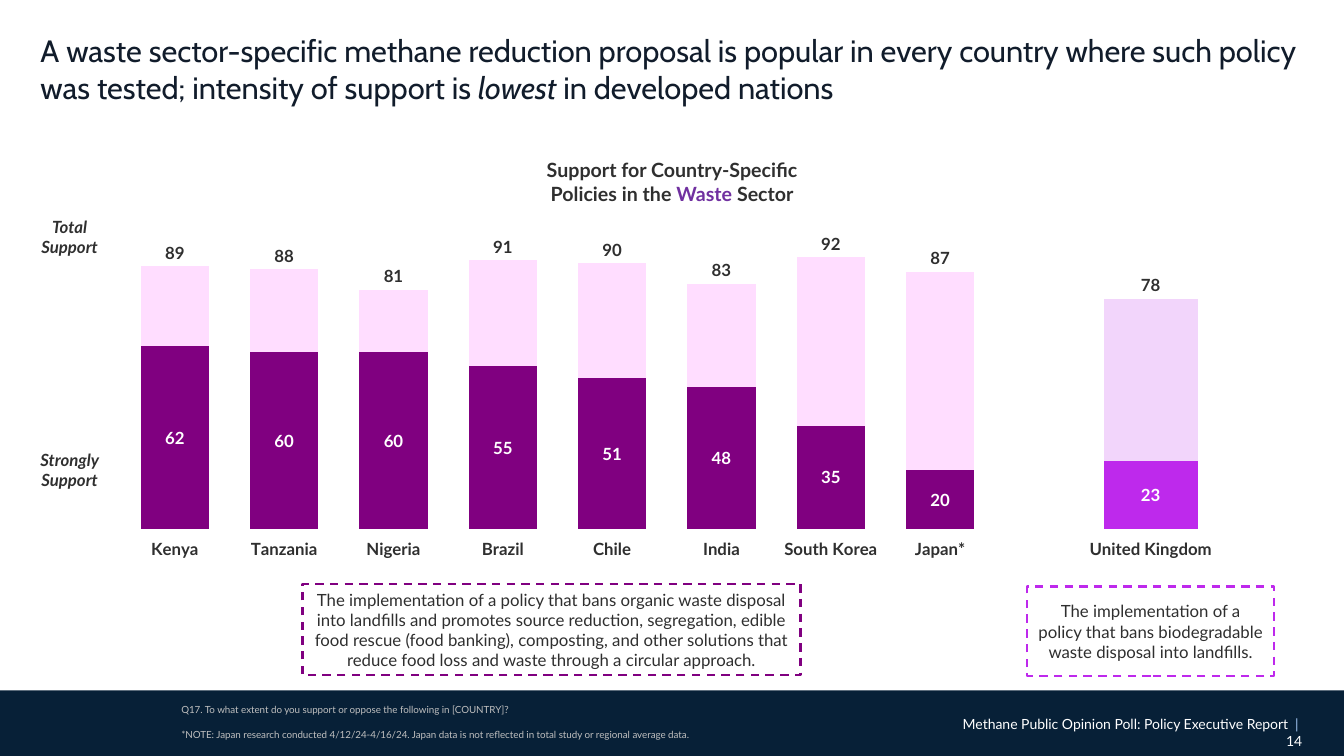
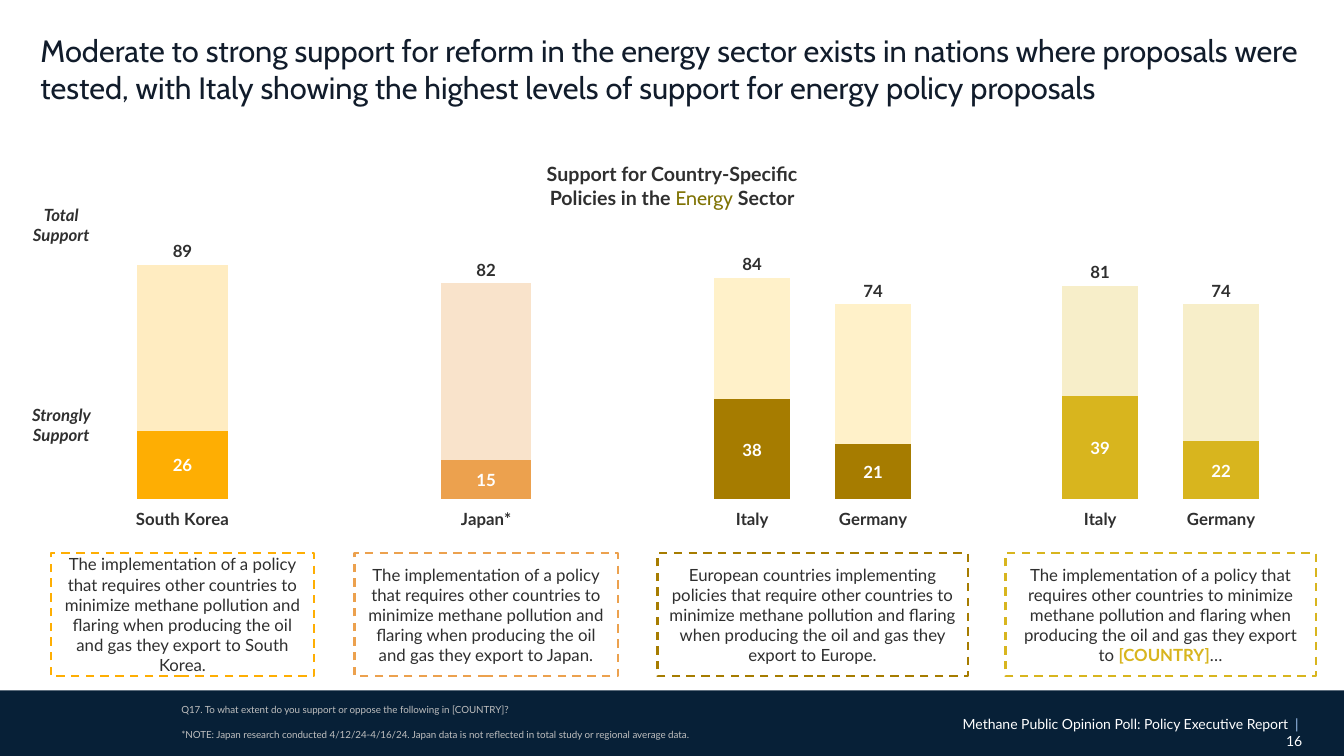
from dataclasses import dataclass

from pptx import Presentation
from pptx.chart.data import CategoryChartData as ChartData
from pptx.dml.color import RGBColor as Rgb
from pptx.enum.chart import XL_CHART_TYPE as ChartType, XL_LABEL_POSITION as LabelPos
from pptx.enum.chart import XL_TICK_MARK as TickMark
from pptx.enum.dml import MSO_LINE as LineDash
from pptx.enum.shapes import MSO_SHAPE as Preset
from pptx.enum.text import MSO_ANCHOR as Anchor, MSO_AUTO_SIZE as AutoSize, PP_ALIGN as Align
from pptx.util import Cm, Pt


@dataclass(frozen=True)
class Theme:
    title_font: str = "Cabin"
    body_font: str = "Lato"
    title_ink: str = "111C2B"
    ink: str = "2F2F2F"
    white: str = "FFFFFF"
    band: str = "072037"
    divider: str = "A3C7F6"
    note: str = "BFBFBF"
    waste: str = "7030A0"
    energy: str = "7F7304"
    purple: str = "800080"
    pink: str = "FFDDFF"
    violet: str = "BE29EC"
    lilac: str = "F2D5FB"
    amber: str = "FEAE03"
    cream: str = "FFECC1"
    orange: str = "ECA14E"
    peach: str = "F9E3CB"
    bronze: str = "A67C00"
    butter: str = "FFF1C9"
    gold: str = "D8B51E"
    straw: str = "F7EEC9"
    title_size: int = 22
    heading_size: int = 14
    body_size: int = 12
    footer_size: int = 10
    note_size: int = 7


THEME = Theme()
WIDTH, HEIGHT = 33.87, 19.05
REPORT = "Methane Public Opinion Poll: Policy Executive Report"
NOTES = (
    "Q17. To what extent do you support or oppose the following in [COUNTRY]?",
    "*NOTE: Japan research conducted 4/12/24-4/16/24. Japan data is not reflected"
    " in total study or regional average data.",
)
FLARING = ("The implementation of a policy that requires other countries to minimize methane"
           " pollution and flaring when producing the oil and gas they export to ")


class Deck:
    """Builds poll slides in one style, keeping track of the current slide."""

    def __init__(self, theme):
        self.theme = theme
        self.deck = Presentation()
        self.deck.slide_width, self.deck.slide_height = Cm(WIDTH), Cm(HEIGHT)
        self.slide = None

    def style(self, font, size, color, bold=False, italic=False, name=None):
        font.name = name or self.theme.body_font
        font.size = Pt(size)
        font.color.rgb = Rgb.from_string(color)
        font.bold, font.italic = bold, italic

    def add_pieces(self, paragraph, pieces, align, **base):
        paragraph.alignment = align
        for piece in [pieces] if isinstance(pieces, str) else pieces:
            text, changes = (piece, {}) if isinstance(piece, str) else piece
            run = paragraph.add_run()
            run.text = text
            self.style(run.font, **{**base, **changes})

    def inset(self, frame, left, top, right, bottom):
        frame.margin_left, frame.margin_top = Cm(left), Cm(top)
        frame.margin_right, frame.margin_bottom = Cm(right), Cm(bottom)

    def rect(self, left, top, width, height, fill):
        rect = self.slide.shapes.add_shape(Preset.RECTANGLE, Cm(left), Cm(top), Cm(width), Cm(height))
        rect.shadow.inherit = False
        rect.fill.solid()
        rect.fill.fore_color.rgb = Rgb.from_string(fill)
        rect.line.fill.background()
        return rect

    def panel(self, left, top, width, height, pieces, **look):
        panel = self.rect(left, top, width, height, self.theme.white)
        frame = panel.text_frame
        frame.word_wrap, frame.vertical_anchor = True, Anchor.MIDDLE
        base = {"size": self.theme.body_size, "color": self.theme.ink, **look}
        self.add_pieces(frame.paragraphs[0], pieces, Align.CENTER, **base)
        return panel

    def text_box(self, left, top, width, height):
        box = self.slide.shapes.add_textbox(Cm(left), Cm(top), Cm(width), Cm(height))
        box.text_frame.word_wrap = True
        return box.text_frame

    def start(self, title, number):
        self.slide = self.deck.slides.add_slide(self.deck.slide_layouts[5])
        self.title(title)
        self.rect(0, 17.4, WIDTH, HEIGHT - 17.4, self.theme.band)
        self.footer(number)
        self.notes()

    def title(self, pieces):
        title = self.slide.shapes.title
        title.left, title.top, title.width, title.height = Cm(0), Cm(0.03), Cm(WIDTH), Cm(3.18)
        frame = title.text_frame
        frame.auto_size, frame.word_wrap = AutoSize.NONE, True
        frame.vertical_anchor = Anchor.TOP
        self.inset(frame, 1.02, 0.76, 0.76, 0.51)
        self.add_pieces(frame.paragraphs[0], pieces, Align.LEFT, name=self.theme.title_font,
                        size=self.theme.title_size, color=self.theme.title_ink)

    def footer(self, number):
        frame = self.text_box(23.83, 17.91, 8.99, 0.69)
        self.inset(frame, 0.25, 0.13, 0, 0.13)
        look = {"size": self.theme.footer_size, "color": self.theme.white}
        report = [REPORT, ("  | ", {"color": self.theme.divider})]
        self.add_pieces(frame.paragraphs[0], report, Align.RIGHT, **look)
        self.add_pieces(frame.add_paragraph(), str(number), Align.RIGHT, **look)

    def notes(self):
        frame = self.text_box(4.57, 17.65, 22.48, 1.14)
        frame.vertical_anchor = Anchor.MIDDLE
        self.inset(frame, 0, 0.13, 0.25, 0.13)
        for index, note in enumerate(NOTES):
            paragraph = frame.add_paragraph() if index else frame.paragraphs[0]
            paragraph.line_spacing = 0.9
            paragraph.space_before = Pt(10 if index else 0)
            self.add_pieces(paragraph, note, Align.LEFT, size=self.theme.note_size, color=self.theme.note)

    def heading(self, top, sector, **sector_look):
        pieces = ["Support for Country-Specific Policies in the ", (sector, sector_look), " Sector"]
        self.panel(13.41, top, 7.06, 1.35, pieces, size=self.theme.heading_size, bold=True)

    def side_labels(self, left, total_top, strong_top):
        for label, top in (("Total Support", total_top), ("Strongly Support", strong_top)):
            self.panel(left, top, 2.49, 1.27, label, bold=True, italic=True)

    def policy(self, center, top, width, height, pieces, color):
        box = self.panel(center - width / 2, top, width, height, pieces)
        box.line.color.rgb = Rgb.from_string(color)
        box.line.width, box.line.dash_style = Pt(1.5), LineDash.DASH

    def label(self, series, position, color):
        labels = series.data_labels
        labels.show_value, labels.position = True, position
        self.style(labels.font, self.theme.body_size, color, bold=True)

    def support_chart(self, center, top, width, height, support, strong_color, rest_color):
        strong, total = zip(*support.values())
        data = ChartData()
        data.categories = list(support)
        data.add_series("Strongly Support", strong)
        data.add_series("Support", [t - s for s, t in zip(strong, total)])
        data.add_series("Total Support", total)
        chart = self.slide.shapes.add_chart(
            ChartType.COLUMN_STACKED, Cm(center - width / 2), Cm(top), Cm(width), Cm(height), data).chart
        chart.has_title = chart.has_legend = False
        self.style(chart.font, self.theme.footer_size, self.theme.ink)
        countries, scale = chart.category_axis, chart.value_axis
        countries.major_tick_mark = TickMark.OUTSIDE
        countries.format.line.fill.background()
        self.style(countries.tick_labels.font, self.theme.body_size, self.theme.ink, bold=True)
        scale.minimum_scale, scale.maximum_scale = 0, 100
        scale.has_major_gridlines = scale.visible = False
        plot = chart.plots[0]
        plot.gap_width, plot.overlap, plot.vary_by_categories = 60, 100, False
        strong_bars, rest_bars, totals = plot.series
        for bars, color in ((strong_bars, strong_color), (rest_bars, rest_color)):
            bars.format.fill.solid()
            bars.format.fill.fore_color.rgb = Rgb.from_string(color)
        totals.format.fill.background()
        self.label(strong_bars, LabelPos.CENTER, self.theme.white)
        self.label(totals, LabelPos.INSIDE_BASE, self.theme.ink)


def waste_slide(deck):
    theme = deck.theme
    deck.start(["A waste sector-specific methane reduction proposal is popular in every country where"
                " such policy was tested; intensity of support is ",
                ("lowest", {"italic": True}), " in developed nations"], 14)
    support = {"Kenya": (62, 89), "Tanzania": (60, 88), "Nigeria": (60, 81), "Brazil": (55, 91),
               "Chile": (51, 90), "India": (48, 83), "South Korea": (35, 92), "Japan*": (20, 87)}
    deck.support_chart(14.05, 5.72, 22.96, 8.53, support, theme.purple, theme.pink)
    deck.support_chart(29, 5.72, 3.94, 8.53, {"United Kingdom": (23, 78)}, theme.violet, theme.lilac)
    deck.side_labels(0.51, 5.33, 11.2)
    deck.policy(13.9, 14.71, 12.55, 2.31,
                "The implementation of a policy that bans organic waste disposal into landfills and"
                " promotes source reduction, segregation, edible food rescue (food banking),"
                " composting, and other solutions that reduce food loss and waste through a"
                " circular approach.", theme.purple)
    deck.policy(29, 14.78, 6.22, 2.26,
                "The implementation of a policy that bans biodegradable waste disposal into"
                " landfills.", theme.violet)
    deck.heading(3.91, "Waste", color=theme.waste)


def energy_slide(deck):
    theme = deck.theme
    deck.start("Moderate to strong support for reform in the energy sector exists in nations where"
               " proposals were tested, with Italy showing the highest levels of support for energy"
               " policy proposals", 16)
    deck.side_labels(0.3, 5.03, 10.06)
    europe = ("European countries implementing policies that require other countries to minimize"
              " methane pollution and flaring when producing the oil and gas they export to Europe.")
    country = [FLARING, ("[COUNTRY]", {"color": theme.gold, "bold": True}), "…"]
    groups = (
        (4.6, 3.81, 6.63, {"South Korea": (26, 89)}, theme.amber, theme.cream, FLARING + "South Korea."),
        (12.25, 3.81, 6.63, {"Japan*": (15, 82)}, theme.orange, theme.peach, FLARING + "Japan."),
        (20.48, 6.35, 7.82, {"Italy": (38, 84), "Germany": (21, 74)}, theme.bronze, theme.butter, europe),
        (29.25, 6.35, 7.82, {"Italy": (39, 81), "Germany": (22, 74)}, theme.gold, theme.straw, country),
    )
    for center, chart_width, box_width, support, strong, rest, policy in groups:
        deck.support_chart(center, 5.79, chart_width, 7.7, support, strong, rest)
        deck.policy(center, 13.94, box_width, 3.1, policy, strong)
    deck.heading(4.01, "Energy", color=theme.energy, name=theme.title_font, bold=False)


def main():
    deck = Deck(THEME)
    waste_slide(deck)
    energy_slide(deck)
    deck.deck.save("out.pptx")


if __name__ == "__main__":
    main()
